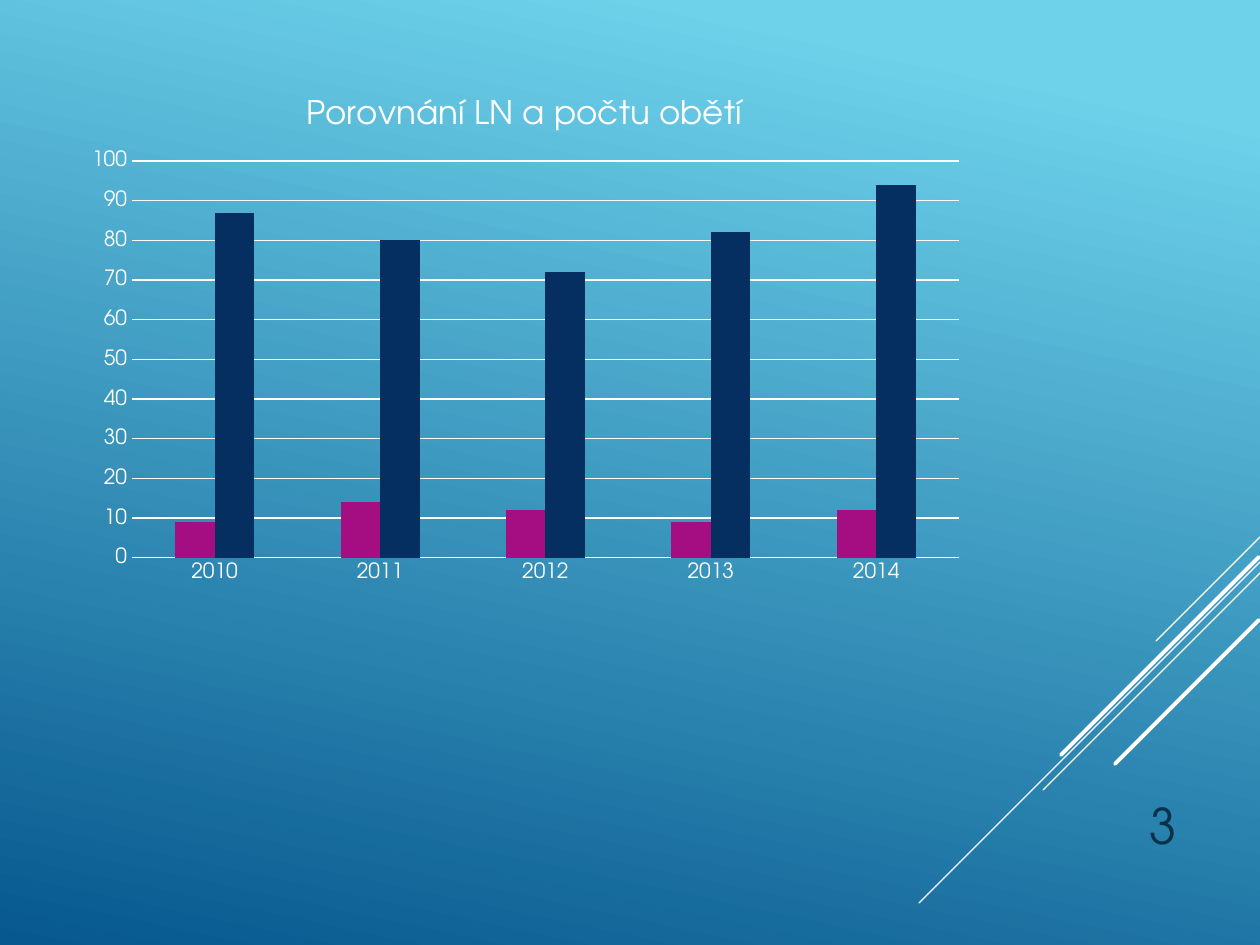
from dataclasses import dataclass

from lxml import etree
from pptx import Presentation
from pptx.chart.data import CategoryChartData
from pptx.dml.color import RGBColor
from pptx.enum.chart import XL_CHART_TYPE, XL_TICK_MARK
from pptx.enum.shapes import MSO_CONNECTOR
from pptx.enum.text import MSO_ANCHOR, PP_ALIGN
from pptx.oxml.ns import qn
from pptx.util import Pt

EMU_PER_PX = 914400 / 126
COLUMNS = XL_CHART_TYPE.COLUMN_CLUSTERED
NO_TICK = XL_TICK_MARK.NONE
STRAIGHT = MSO_CONNECTOR.STRAIGHT
BOTTOM = MSO_ANCHOR.BOTTOM
RIGHT = PP_ALIGN.RIGHT


@dataclass(frozen=True)
class Theme:
    font: str = "TeX Gyre Adventor"
    sky: str = "6ED2EB"
    deep: str = "06588E"
    light: str = "FFFFFF"
    number: str = "0A304A"
    navy: str = "052F61"
    purple: str = "A50E82"
    teal: str = "14967C"
    green: str = "6A9E1F"
    orange: str = "E87D37"
    title_size: float = 18.6
    axis_size: int = 12
    number_size: int = 28
    thin: float = 0.75
    thick: float = 2.25


def px(*lengths):
    return [round(length * EMU_PER_PX) for length in lengths]


def color(value):
    return RGBColor.from_string(value)


def style_font(font, name, size, fill):
    font.name = name
    font.size = Pt(size)
    font.bold = False
    font.color.rgb = color(fill)


def write(frame, text, font, size, fill, align=None):
    para = frame.paragraphs[0]
    para.alignment = align
    span = para.add_run()
    span.text = text
    style_font(span.font, font, size, fill)


class PageBuilder:
    def __init__(self, page, theme):
        self.page = page
        self.theme = theme

    def background(self, angle):
        fill = self.page.background.fill
        fill.gradient()
        fill.gradient_angle = 360 - angle
        stops = ((0.1, self.theme.sky), (1, self.theme.deep))
        for stop, (position, shade) in zip(fill.gradient_stops, stops):
            stop.position = position
            stop.color.rgb = color(shade)

    def stroke(self, line, width):
        line.color.rgb = color(self.theme.light)
        line.width = Pt(width)

    def line(self, start, end, width):
        connector = self.page.shapes.add_connector(STRAIGHT, *px(*start, *end))
        self.stroke(connector.line, width)
        properties = connector._element.spPr
        properties.find(qn("a:ln")).set("cap", "rnd")
        etree.SubElement(properties, qn("a:effectLst"))

    def text(self, text, area, size, fill, align):
        box = self.page.shapes.add_textbox(*px(*area))
        box.text_frame.word_wrap = True
        box.text_frame.vertical_anchor = BOTTOM
        write(box.text_frame, text, self.theme.font, size, fill, align=align)

    def column_chart(self, title, area, plot_area, categories, series):
        theme = self.theme
        data = CategoryChartData()
        data.categories = categories
        for name, values, _ in series:
            data.add_series(name, values)
        chart = self.page.shapes.add_chart(COLUMNS, *px(*area), data).chart
        style_font(chart.font, theme.font, theme.axis_size, theme.light)
        chart.has_legend = False
        chart.has_title = True
        write(chart.chart_title.text_frame, title, theme.font, theme.title_size, theme.light)
        chart.chart_title.include_in_layout = False

        plot = chart.plots[0]
        plot.gap_width = 219
        plot.overlap = 0
        plot.vary_by_categories = False
        self.style_series(plot.series, series)

        for axis in (chart.category_axis, chart.value_axis):
            axis.major_tick_mark = NO_TICK
            axis.minor_tick_mark = NO_TICK
            style_font(axis.tick_labels.font, theme.font, theme.axis_size, theme.light)
        self.stroke(chart.category_axis.format.line, theme.thin)
        values = chart.value_axis
        values.minimum_scale, values.maximum_scale, values.major_unit = 0, 100, 10
        values.format.line.fill.background()
        self.stroke(values.major_gridlines.format.line, theme.thin)
        self.place_plot(chart, area, plot_area)

    def style_series(self, plotted, series):
        elements = []
        for columns, (_, values, shade) in zip(plotted, series):
            columns.format.fill.solid()
            columns.format.fill.fore_color.rgb = color(shade)
            element = columns._element
            elements.append(element)
            if not values:
                element.remove(element.find(qn("c:val")))
        first, second = elements[:2]
        first.addprevious(second)

    def place_plot(self, chart, area, plot_area):
        left, top, width, height = area
        inner_left, inner_top, inner_width, inner_height = plot_area
        settings = {
            "layoutTarget": "inner",
            "xMode": "edge",
            "yMode": "edge",
            "x": round((inner_left - left) / width, 4),
            "y": round((inner_top - top) / height, 4),
            "w": round(inner_width / width, 4),
            "h": round(inner_height / height, 4),
        }
        plot = chart._chartSpace.chart.plotArea
        for old in plot.findall(qn("c:layout")):
            plot.remove(old)
        layout = etree.Element(qn("c:layout"))
        manual = etree.SubElement(layout, qn("c:manualLayout"))
        for name, value in settings.items():
            etree.SubElement(manual, qn(f"c:{name}")).set("val", str(value))
        plot.insert(0, layout)


def main():
    theme = Theme()
    deck = Presentation()
    deck.slide_width, deck.slide_height = px(1260, 945)
    page = deck.slides.add_slide(deck.slide_layouts[6])
    builder = PageBuilder(page, theme)
    builder.background(102)

    rays = (
        ((1260, 537), 104, theme.thin),
        ((1260, 562), 341, theme.thin),
        ((1260, 573), 217, theme.thin),
        ((1259, 557), 198, theme.thick),
        ((1259, 620), 144, theme.thick),
    )
    for (x, y), reach, width in rays:
        builder.line((x, y), (x - reach, y + reach), width)

    builder.column_chart(
        "Porovnání LN a počtu obětí",
        (73, 74, 903, 519),
        (132, 161, 827, 397),
        ("2010", "2011", "2012", "2013", "2014"),
        (
            ("Series 1", (87, 80, 72, 82, 94), theme.navy),
            ("Series 2", (9, 14, 12, 9, 12), theme.purple),
            ("Series 3", (), theme.teal),
            ("Series 4", (), theme.green),
            ("Series 5", (), theme.orange),
        ),
    )
    builder.text("3", (1071, 769, 118, 92), theme.number_size, theme.number, RIGHT)
    deck.save("out.pptx")


if __name__ == "__main__":
    main()
